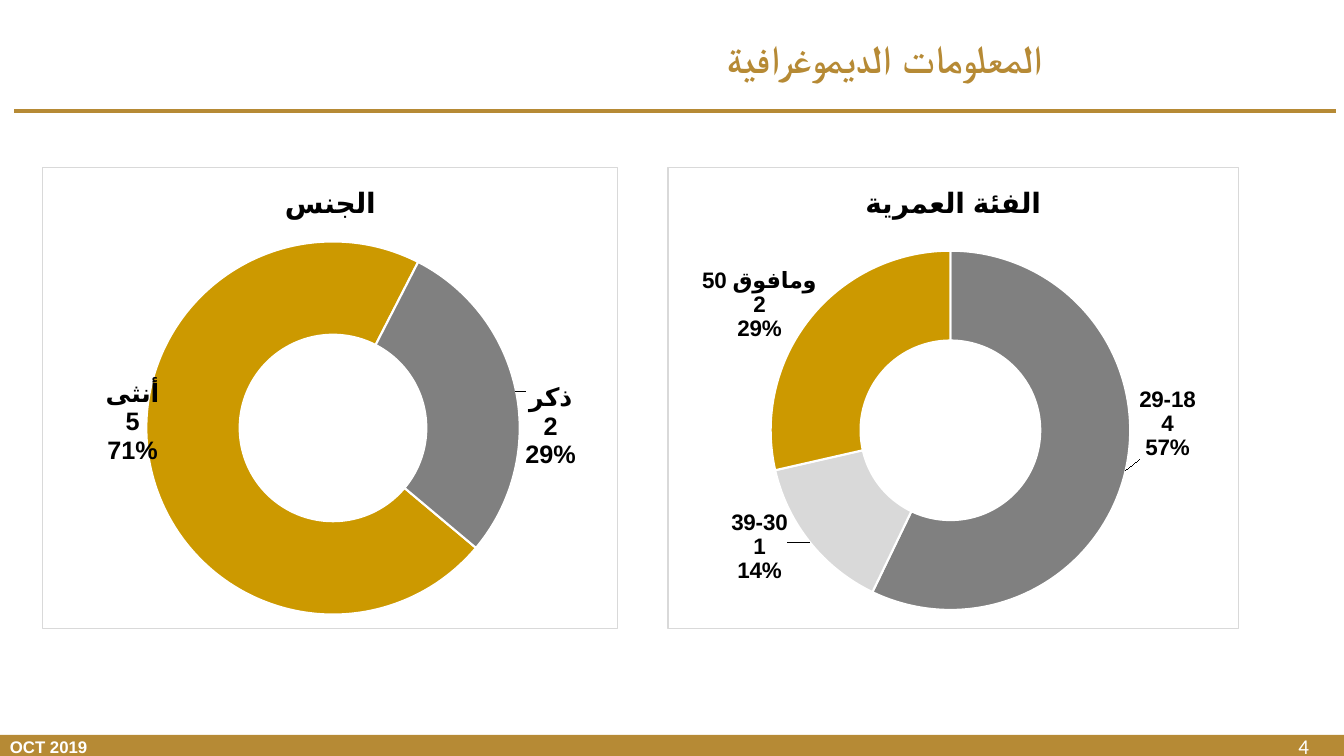
"""Build the demographics slide: two doughnut charts under a gold heading."""
from copy import deepcopy
from lxml.etree import fromstring
from pptx import Presentation
from pptx.chart.data import CategoryChartData as Data
from pptx.dml.color import RGBColor as RGB
from pptx.enum.chart import XL_CHART_TYPE as Kind
from pptx.enum.shapes import MSO_CONNECTOR as Link, MSO_SHAPE as Form
from pptx.enum.text import MSO_ANCHOR as Anchor, PP_ALIGN as Align
from pptx.oxml.ns import nsdecls, qn
from pptx.util import Inches, Pt

GOLD, MUSTARD, GRAY, PALE = "B68A35", "CC9900", "808080", "D9D9D9"
WHITE, BLACK = "FFFFFF", "000000"


def style(font, size, tint, bold=True, face="Arial"):
    """Set size, colour, weight and face of a font."""
    font.size, font.bold, font.name = Pt(size), bold, face
    font.color.rgb = RGB.from_string(tint)


def place(*frame, mode=""):
    """Make a manual layout from x, y and, if given, w and h shares."""
    parts = "".join(f'<c:{k} val="{v}"/>' for k, v in zip("xywh", frame))
    return fromstring(f'<c:layout {nsdecls("c")}><c:manualLayout>{mode}{parts}'
                      "</c:manualLayout></c:layout>")


deck = Presentation()
deck.slide_width, deck.slide_height = Inches(13.33), Inches(7.5)
slide = deck.slides.add_slide(deck.slide_layouts[6])
shapes = slide.shapes

band = shapes.add_shape(Form.RECTANGLE, 0, Inches(7.29), deck.slide_width, Inches(0.21))
band.shadow.inherit = False
band.fill.solid()
band.fill.fore_color.rgb = RGB.from_string(GOLD)
band.line.fill.background()

rule = shapes.add_connector(Link.STRAIGHT, Inches(0.14), Inches(1.1), Inches(13.25), Inches(1.1))
rule.line.color.rgb = RGB.from_string(GOLD)
rule.line.width = Pt(3)
rule._element.spPr.append(fromstring(f'<a:effectLst {nsdecls("a")}/>'))

for text, frame, size, tint, bold, face in (
        ("4", (12.78, 7.23, 0.78, 0.4), 15, WHITE, False, "Calibri"),
        ("OCT 2019", (0, 7.26, 2.11, 0.4), 12, WHITE, True, "Arial"),
        ("المعلومات الديموغرافية", (5.26, 0.17, 7.03, 0.8), 28, GOLD, True, "Arial")):
    box = shapes.add_textbox(*map(Inches, frame)).text_frame
    box.word_wrap = True
    par = box.paragraphs[0]
    par.text = text
    style(par.font, size, tint, bold, face)
    if tint == GOLD:
        box.vertical_anchor = Anchor.MIDDLE
        par.alignment = Align.CENTER
        par._p.get_or_add_pPr().set("rtl", "1")

inner = ('<c:layoutTarget val="inner"/><c:xMode val="edge"/><c:yMode val="edge"/>')
rings = (
    ("الجنس", 0.42, 5.71, 130, 18, (0.18, 0.16, 0.65, 0.81),
     (("أنثى", 5, MUSTARD, (-0.11, -0.07)), ("ذكر", 2, GRAY, (0.14, 0.06)))),
    ("الفئة العمرية", 6.62, 5.67, 0, 16, (0.18, 0.18, 0.63, 0.78),
     (("الفئة العمرية", None, MUSTARD, None), ("29-18", 4, GRAY, (0.15, -0.08)),
      ("39-30", 1, PALE, (-0.15, 0.07)), ("50 ومافوق", 2, MUSTARD, (-0.15, -0.09)))))

for title, left, width, start, size, area, parts in rings:
    data = Data()
    data.categories = [part[0] for part in parts]
    data.add_series("Series 1", [part[1] for part in parts])
    chart = shapes.add_chart(Kind.DOUGHNUT, Inches(left), Inches(1.66),
                             Inches(width), Inches(4.58), data).chart
    style(chart.font, 16, BLACK)
    chart.has_legend = False
    chart.has_title = True
    head = chart.chart_title.text_frame.paragraphs[0]
    head.text = title
    style(head.font, 20, BLACK)

    root = chart.element
    root.find(qn("c:chart")).addnext(fromstring(
        f'<c:spPr {nsdecls("c", "a")}><a:solidFill><a:srgbClr val="{WHITE}"/></a:solidFill>'
        f'<a:ln w="9525"><a:solidFill><a:srgbClr val="{PALE}"/></a:solidFill></a:ln></c:spPr>'))
    plot = root.find(".//" + qn("c:plotArea"))
    for old in plot.findall(qn("c:layout")):
        plot.remove(old)
    plot.insert(0, place(*area, mode=inner))
    root.find(".//" + qn("c:firstSliceAng")).set("val", str(start))
    root.find(".//" + qn("c:holeSize")).set("val", "55")

    ring = chart.plots[0]
    ring.vary_by_categories = True
    series = ring.series[0]
    labels = series.data_labels
    labels.show_value = labels.show_percentage = labels.show_category_name = True
    style(labels.font, size, BLACK)
    tags = labels._element
    tags.find(qn("c:showBubbleSize")).addnext(
        fromstring(f'<c:separator {nsdecls("c")}>\n</c:separator>'))
    common = [tag for tag in tags if tag.tag != qn("c:showLeaderLines")]
    spot = 0
    for i, (name, value, tint, shift) in enumerate(parts):
        point = series.points[i].format
        point.fill.solid()
        point.fill.fore_color.rgb = RGB.from_string(tint)
        point.line.color.rgb = RGB.from_string(WHITE)
        point.line.width = Pt(1.5)
        if shift:
            tag = fromstring(f'<c:dLbl {nsdecls("c")}><c:idx val="{i}"/></c:dLbl>')
            tag.append(place(*shift))
            tag.extend(deepcopy(common))
            tags.insert(spot, tag)
            spot += 1

deck.save("out.pptx")
